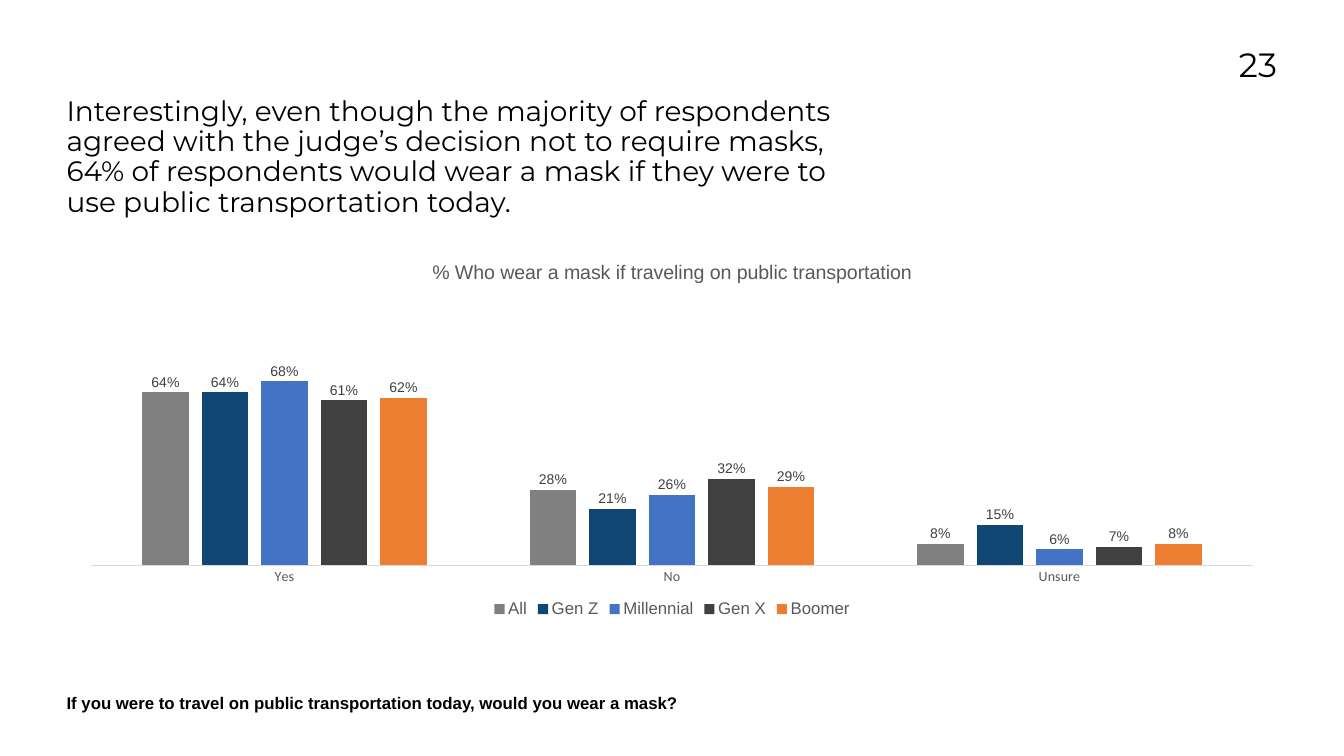
from lxml import etree
from pptx import Presentation
from pptx.chart.data import CategoryChartData
from pptx.dml.color import RGBColor
from pptx.enum.chart import XL_CHART_TYPE, XL_LABEL_POSITION, XL_LEGEND_POSITION, XL_TICK_MARK
from pptx.enum.text import MSO_ANCHOR, MSO_AUTO_SIZE, PP_ALIGN
from pptx.oxml.ns import qn
from pptx.util import Inches, Pt


def style(font, size, color, name="Arial", bold=False):
    font.size, font.name, font.bold = Pt(size), name, bold
    font.color.rgb = RGBColor.from_string(color)


def fill_text(sp, box, text, size, name, bold=False, align=PP_ALIGN.LEFT, spacing=1.0):
    """Place a text shape and write one formatted paragraph in it."""
    sp.left, sp.top, sp.width, sp.height = [Inches(v) for v in box]
    tf = sp.text_frame
    tf.word_wrap = True
    tf.auto_size = MSO_AUTO_SIZE.NONE
    tf.vertical_anchor = MSO_ANCHOR.TOP
    tf.margin_left = tf.margin_top = tf.margin_right = tf.margin_bottom = 0
    p = tf.paragraphs[0]
    p.alignment, p.line_spacing = align, spacing
    r = p.add_run()
    r.text = text
    style(r.font, size, "000000", name, bold)


LEFT = 1.32
prs = Presentation()
prs.slide_width, prs.slide_height = Inches(26.67), Inches(15)
s = prs.slides.add_slide(prs.slide_layouts[5])

# Headline, page number and survey question
fill_text(s.shapes.title, (LEFT, 1.93, 16.01, 2.08),
          "Interestingly, even though the majority of respondents agreed with the judge’s "
          "decision not to require masks, 64% of respondents would wear a mask if they were "
          "to use public transportation today.", 40, "Montserrat", spacing=0.9)
fill_text(s.shapes.add_textbox(0, 0, 0, 0), (23.09, 0.88, 2.25, 1.64),
          "23", 48, "Montserrat", align=PP_ALIGN.RIGHT)
fill_text(s.shapes.add_textbox(0, 0, 0, 0), (LEFT, 13.55, 14.52, 0.65),
          "If you were to travel on public transportation today, would you wear a mask?",
          24, "Arial", bold=True, spacing=1.5)

# Answers by generation
generations = [
    ("All", (0.64, 0.28, 0.08), "808080"),
    ("Gen Z", (0.64, 0.21, 0.15), "104674"),
    ("Millennial", (0.68, 0.26, 0.06), "4472C4"),
    ("Gen X", (0.61, 0.32, 0.07), "404040"),
    ("Boomer", (0.62, 0.29, 0.08), "ED7D31"),
]
data = CategoryChartData(number_format="0%")
data.categories = ["Yes", "No", "Unsure"]
for name, values, color in generations:
    data.add_series(name, values)
chart = s.shapes.add_chart(XL_CHART_TYPE.COLUMN_CLUSTERED, Inches(LEFT), Inches(4.88),
                           Inches(24.03), Inches(7.46), data).chart
style(chart.font, 10, "000000", "Calibri")

chart.has_title = True
r = chart.chart_title.text_frame.paragraphs[0].add_run()
r.text = "% Who wear a mask if traveling on public transportation"
style(r.font, 28, "595959")
chart.chart_title.include_in_layout = False

chart.has_legend = True
chart.legend.position = XL_LEGEND_POSITION.BOTTOM
chart.legend.include_in_layout = False
style(chart.legend.font, 24, "595959")

axis = chart.category_axis
axis.major_tick_mark = XL_TICK_MARK.NONE
axis.format.line.color.rgb = RGBColor.from_string("D9D9D9")
axis.format.line.width = Pt(0.75)
style(axis.tick_labels.font, 20, "595959", "Calibri")

axis = chart.value_axis
axis.minimum_scale, axis.maximum_scale = 0, 1
axis.has_major_gridlines = False
axis.visible = False

plot = chart.plots[0]
plot.gap_width, plot.overlap, plot.vary_by_categories = 219, -27, False
for series, (name, values, color) in zip(plot.series, generations):
    series.format.fill.solid()
    series.format.fill.fore_color.rgb = RGBColor.from_string(color)
    labels = series.data_labels
    labels.show_value = True
    labels.position = XL_LABEL_POSITION.OUTSIDE_END
    labels.number_format, labels.number_format_is_linked = "0%", False
    style(labels.font, 20, "404040")

# Fixed inner plot area, as fractions of the chart
area = plot._element.getparent()
for old in area.findall(qn("c:layout")):
    area.remove(old)
layout = etree.Element(qn("c:layout"))
area.insert(0, layout)
manual = etree.SubElement(layout, qn("c:manualLayout"))
for tag, value in [("layoutTarget", "inner"), ("xMode", "edge"), ("yMode", "edge"),
                   ("x", "0.02"), ("y", "0.13"), ("w", "0.96"), ("h", "0.72")]:
    etree.SubElement(manual, qn("c:" + tag)).set("val", value)

prs.save("out.pptx")
